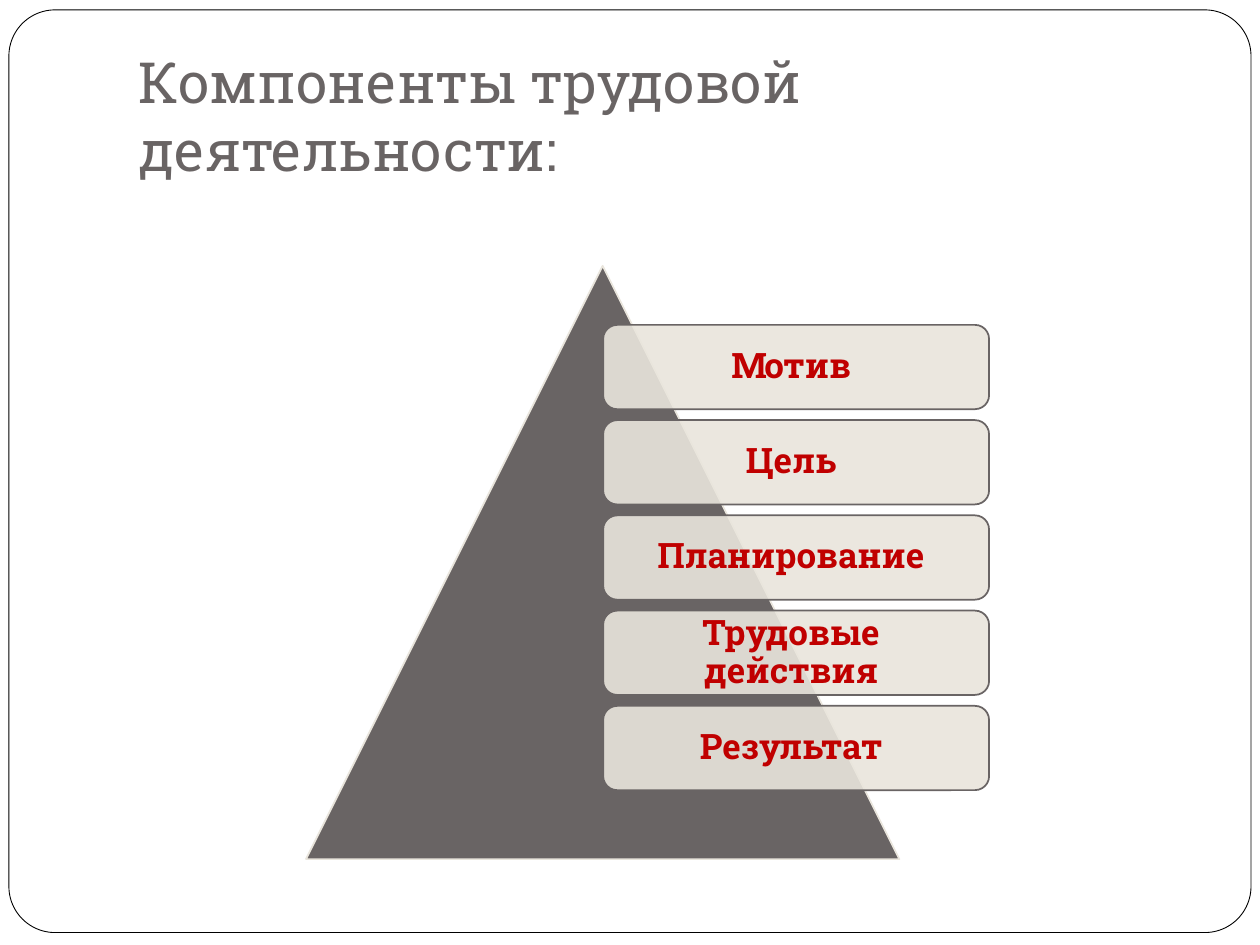
"""Build a slide showing the components of work activity beside a pyramid."""
from lxml.etree import SubElement
from pptx import Presentation
from pptx.dml.color import RGBColor
from pptx.enum.shapes import MSO_SHAPE as Shape
from pptx.enum.text import MSO_ANCHOR as Anchor, PP_ALIGN as Align
from pptx.oxml.ns import qn
from pptx.util import Cm, Pt

WHITE = RGBColor(0xFF, 0xFF, 0xFF)
BLACK = RGBColor(0x00, 0x00, 0x00)
GRAY = RGBColor(0x69, 0x64, 0x64)
BEIGE = RGBColor(0xE9, 0xE5, 0xDC)
RED = RGBColor(0xC0, 0x00, 0x00)
FONT = "Roboto Slab"
COMPONENTS = ["Мотив", "Цель", "Планирование", "Трудовые действия", "Результат"]
FIRST_TOP, STEP = 6.55, 1.92


def add_outlined(kind, left, top, width, height, fill, line, weight):
    shape = slide.shapes.add_shape(kind, Cm(left), Cm(top), Cm(width), Cm(height))
    shape.shadow.inherit = False
    shape.fill.solid()
    shape.fill.fore_color.rgb = fill
    shape.line.color.rgb = line
    shape.line.width = Pt(weight)
    return shape


deck = Presentation()
deck.slide_width, deck.slide_height = Cm(25.4), Cm(19.05)
slide = deck.slides.add_slide(deck.slide_layouts[5])

frame = add_outlined(Shape.ROUNDED_RECTANGLE, 0.18, 0.2, 25.04, 18.6, WHITE, BLACK, 0.5)
frame.adjustments[0] = 0.05
slide.shapes._spTree.insert(2, frame._element)

title = slide.shapes.title
title.left, title.top, title.width, title.height = Cm(2.54), Cm(0.76), Cm(21.59), Cm(3.18)
title.text_frame.text = "Компоненты трудовой деятельности:"
title.text_frame.vertical_anchor = Anchor.BOTTOM
title.text_frame.margin_bottom = Cm(0.25)
para = title.text_frame.paragraphs[0]
para.alignment = Align.LEFT
para.font.name = FONT
para.font.size = Pt(32.4)
para.font.color.rgb = GRAY

add_outlined(Shape.ISOSCELES_TRIANGLE, 6.17, 5.36, 11.96, 11.96, GRAY, BEIGE, 1)

for index, component in enumerate(COMPONENTS):
    box = add_outlined(Shape.ROUNDED_RECTANGLE, 12.16, FIRST_TOP + index * STEP,
                       7.78, 1.7, BEIGE, GRAY, 1)
    color = box.fill._xPr.find(qn("a:solidFill"))[0]
    SubElement(color, qn("a:alpha"), val="90000")
    text = box.text_frame
    text.word_wrap = True
    text.vertical_anchor = Anchor.MIDDLE
    text.margin_left, text.margin_right = Cm(0.28), Cm(0.48)
    text.margin_top = text.margin_bottom = Cm(0.2)
    text.text = component
    para = text.paragraphs[0]
    para.alignment = Align.CENTER
    para.line_spacing = 0.9
    para.font.name = FONT
    para.font.size = Pt(20)
    para.font.bold = True
    para.font.color.rgb = RED

deck.save("out.pptx")
